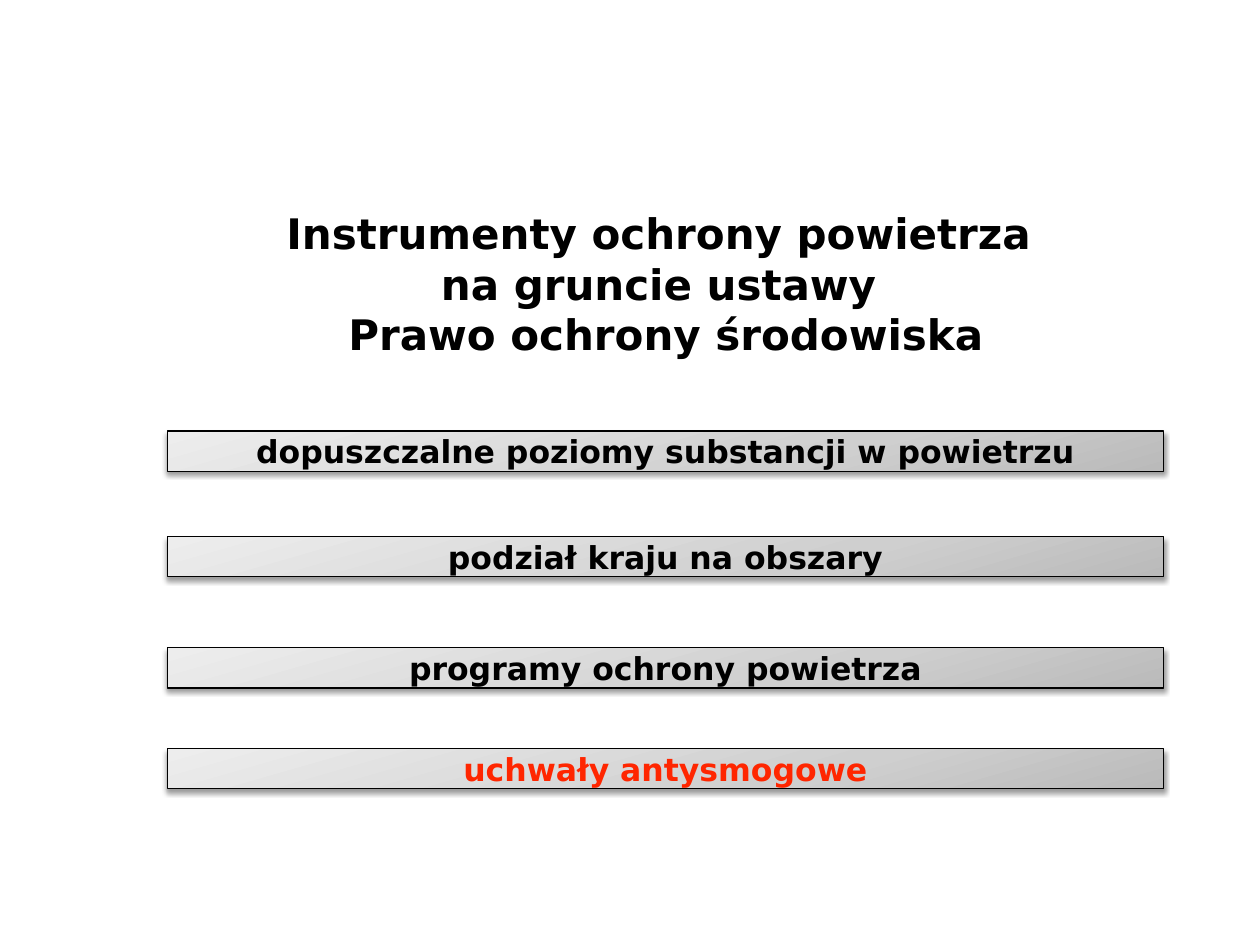
"""Build a slide listing the air protection instruments as four gradient bars."""
from copy import deepcopy

from lxml import etree
from pptx import Presentation
from pptx.dml.color import RGBColor
from pptx.enum.shapes import MSO_SHAPE
from pptx.enum.text import MSO_ANCHOR, MSO_AUTO_SIZE, PP_ALIGN
from pptx.oxml.ns import qn
from pptx.util import Cm, Pt

RECTANGLE = MSO_SHAPE.RECTANGLE
MIDDLE = MSO_ANCHOR.MIDDLE
FIT_SHAPE = MSO_AUTO_SIZE.SHAPE_TO_FIT_TEXT
CENTER = PP_ALIGN.CENTER

BLACK = RGBColor(0x00, 0x00, 0x00)
RED = RGBColor(0xFF, 0x26, 0x00)
GRADIENT = (
    (0, RGBColor(0xBA, 0xBA, 0xBA)),
    (0.35, RGBColor(0xCF, 0xCF, 0xCF)),
    (1, RGBColor(0xED, 0xED, 0xED)),
)
FONT = "DejaVu Sans"

TITLE = ("Instrumenty ochrony powietrza ",
         "na gruncie ustawy \vPrawo ochrony środowiska")
BARS = (
    (8.69, "dopuszczalne poziomy substancji w powietrzu", BLACK),
    (10.82, "podział kraju na obszary", BLACK),
    (13.06, "programy ochrony powietrza", BLACK),
    (15.09, "uchwały antysmogowe", RED),
)


def write_text(sp, *lines, size=18, color=BLACK, inset=0, wrap=True):
    """Fill a shape with centred bold paragraphs."""
    tf = sp.text_frame
    tf.text = "\n".join(lines)
    tf.word_wrap = wrap
    tf.auto_size = FIT_SHAPE
    tf.vertical_anchor = MIDDLE
    tf.margin_left = tf.margin_right = Cm(inset)
    tf.margin_top = tf.margin_bottom = Cm(inset)
    for p in tf.paragraphs:
        p.alignment = CENTER
        for r in p.runs:
            r.font.name = FONT
            r.font.size = Pt(size)
            r.font.bold = True
            r.font.color.rgb = color


def fill_gradient(sp):
    """Give a shape the three-stop grey gradient."""
    fill = sp.fill
    fill.gradient()
    fill.gradient_angle = 106
    stops = sp._element.spPr.find(".//" + qn("a:gsLst"))
    stops.append(deepcopy(stops[-1]))
    for stop, (position, color) in zip(fill.gradient_stops, GRADIENT):
        stop.position = position
        stop.color.rgb = color


def add_shadow(sp):
    """Give a shape a soft shadow straight below it."""
    sp.shadow.inherit = False
    effects = sp._element.spPr.find(qn("a:effectLst"))
    shadow = etree.SubElement(
        effects, qn("a:outerShdw"), blurRad=str(Pt(3)), dist=str(Pt(1.6)),
        dir="5400000", rotWithShape="0")
    color = etree.SubElement(shadow, qn("a:srgbClr"), val=str(BLACK))
    etree.SubElement(color, qn("a:alpha"), val="38000")


def add_bar(s, top, text, color):
    """Add one outlined gradient bar with its label."""
    sp = s.shapes.add_shape(RECTANGLE, Cm(3.38), Cm(top), Cm(20.07), Cm(0.81))
    fill_gradient(sp)
    sp.line.color.rgb = BLACK
    sp.line.width = Pt(0.75)
    add_shadow(sp)
    write_text(sp, text, color=color)


def set_title(s):
    """Place and format the slide title."""
    sp = s.shapes.title
    sp.left, sp.top, sp.width, sp.height = Cm(5.41), Cm(4.04), Cm(16.03), Cm(3.35)
    write_text(sp, *TITLE, size=24, inset=0.15, wrap=False)


def main():
    """Build and save the slide."""
    prs = Presentation()
    prs.slide_width, prs.slide_height = Cm(25.4), Cm(19.05)
    s = prs.slides.add_slide(prs.slide_layouts[5])
    set_title(s)
    for top, text, color in BARS:
        add_bar(s, top, text, color)
    prs.save("out.pptx")


if __name__ == "__main__":
    main()
